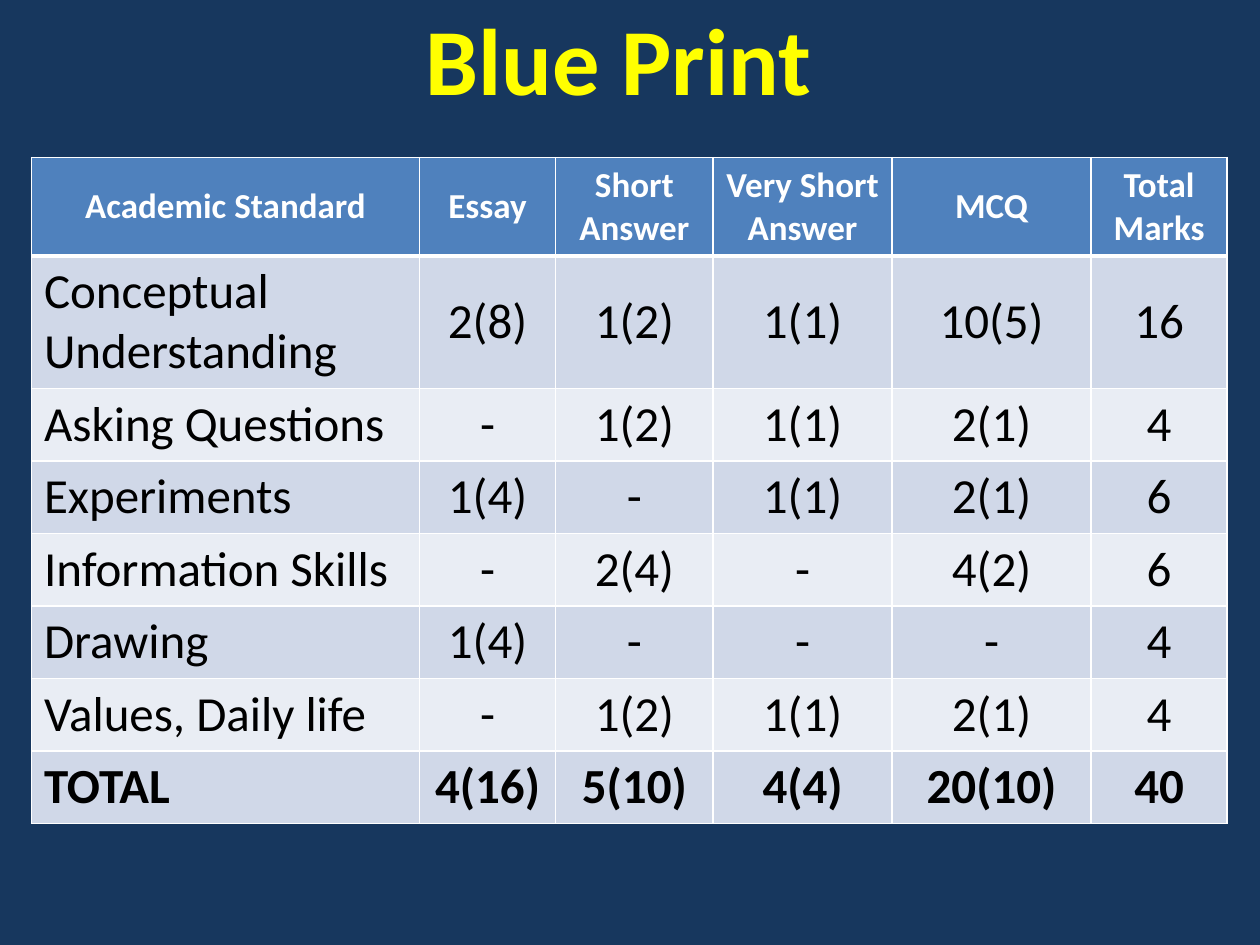
from lxml import etree
from pptx import Presentation, util as u
from pptx.dml.color import RGBColor
from pptx.enum import text
from pptx.oxml.ns import qn

NAVY = RGBColor(0x17, 0x37, 0x5E)
YELLOW = RGBColor(0xFF, 0xFF, 0x00)
WHITE = RGBColor(0xFF, 0xFF, 0xFF)
BLACK = RGBColor(0x00, 0x00, 0x00)
HEADER_BLUE = RGBColor(0x4F, 0x81, 0xBD)
BANDS = (RGBColor(0xD0, 0xD8, 0xE8), RGBColor(0xE9, 0xED, 0xF4))

COLUMN_WIDTHS = (3.08, 1.08, 1.25, 1.42, 1.58, 1.08)
ROW_HEIGHT = 0.41  # minimum; rows grow to fit their text
BLUEPRINT = (
    ("Academic Standard", "Essay", "Short Answer", "Very Short Answer", "MCQ", "Total Marks"),
    ("Conceptual Understanding", "2(8)", "1(2)", "1(1)", "10(5)", "16"),
    ("Asking Questions", "-", "1(2)", "1(1)", "2(1)", "4"),
    ("Experiments", "1(4)", "-", "1(1)", "2(1)", "6"),
    ("Information Skills", "-", "2(4)", "-", "4(2)", "6"),
    ("Drawing", "1(4)", "-", "-", "-", "4"),
    ("Values, Daily life", "-", "1(2)", "1(1)", "2(1)", "4"),
    ("TOTAL", "4(16)", "5(10)", "4(4)", "20(10)", "40"),
)


def style_paragraph(paragraph, size, color, bold, centred=True):
    paragraph.alignment = text.PP_ALIGN.CENTER if centred else text.PP_ALIGN.LEFT
    font = paragraph.font
    font.name, font.size, font.bold = "Calibri", u.Pt(size), bold
    font.color.rgb = color


def add_title(slide, wording):
    title = slide.shapes.title
    title.left, title.top = u.Inches(0.12), u.Inches(0.08)
    title.width, title.height = u.Inches(9.75), u.Inches(0.75)
    frame = title.text_frame
    frame.text = wording
    frame.auto_size = text.MSO_AUTO_SIZE.NONE
    frame.vertical_anchor = text.MSO_ANCHOR.MIDDLE
    style_paragraph(frame.paragraphs[0], 54, YELLOW, True)


def set_borders(cell, top=1, bottom=1):
    properties = cell._tc.get_or_add_tcPr()
    for side, width in (("L", 1), ("R", 1), ("T", top), ("B", bottom)):
        line = etree.SubElement(properties, qn(f"a:ln{side}"), w=str(u.Pt(width)))
        fill = etree.SubElement(line, qn("a:solidFill"))
        etree.SubElement(fill, qn("a:srgbClr"), val=str(WHITE))


def format_cell(cell, row, column):
    header, total = row == 0, row == len(BLUEPRINT) - 1
    # The rule under the header is shared by the first two rows
    set_borders(cell, top=3 if row == 1 else 1, bottom=3 if header else 1)
    cell.fill.solid()
    cell.fill.fore_color.rgb = HEADER_BLUE if header else BANDS[(row - 1) % 2]
    cell.vertical_anchor = text.MSO_ANCHOR.MIDDLE
    style_paragraph(cell.text_frame.paragraphs[0], 20 if header else 28,
                    WHITE if header else BLACK, header or total,
                    centred=header or column > 0)


def add_blueprint_table(slide):
    frame = slide.shapes.add_table(len(BLUEPRINT), len(COLUMN_WIDTHS), u.Inches(0.25),
                                   u.Inches(1.25), u.Inches(9.5), u.Inches(5.2))
    table = frame.table
    for column, width in zip(table.columns, COLUMN_WIDTHS):
        column.width = u.Inches(width)
    for row, values in enumerate(BLUEPRINT):
        table.rows[row].height = u.Inches(ROW_HEIGHT)
        for column, value in enumerate(values):
            cell = table.cell(row, column)
            cell.text = value
            format_cell(cell, row, column)
    frame.width, frame.height = u.Inches(9.5), u.Inches(5.2)


def main():
    deck = Presentation()
    deck.slide_width, deck.slide_height = u.Inches(10), u.Inches(7.5)
    slide = deck.slides.add_slide(deck.slide_layouts[5])

    # Background
    slide.background.fill.solid()
    slide.background.fill.fore_color.rgb = NAVY

    # Title and marks table
    add_title(slide, "Blue Print ")
    add_blueprint_table(slide)
    deck.save("out.pptx")


if __name__ == "__main__":
    main()
